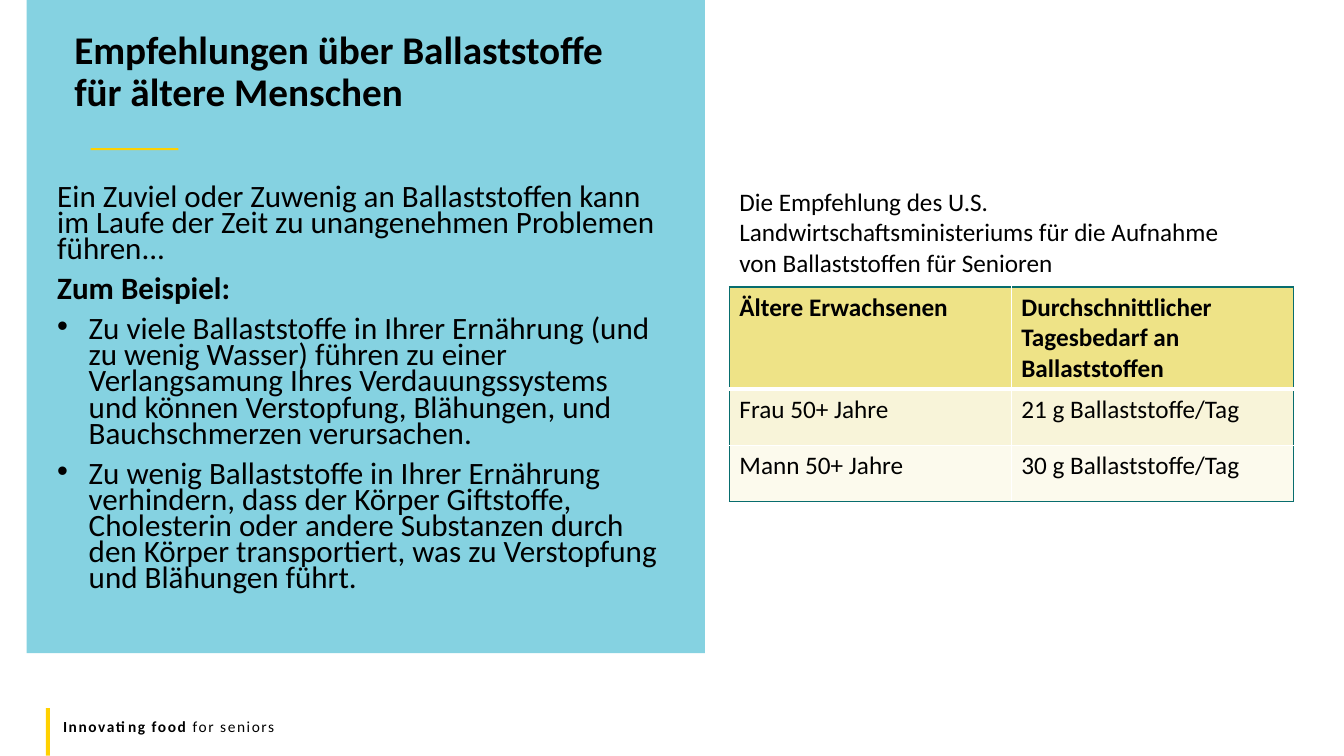
from pptx import Presentation
from pptx.dml.color import RGBColor
from pptx.enum.shapes import MSO_SHAPE as Preset
from pptx.enum.text import MSO_ANCHOR as Anchor
from pptx.oxml import parse_xml
from pptx.oxml.ns import nsdecls
from pptx.util import Pt

BLACK = RGBColor(0x00, 0x00, 0x00)
WHITE = RGBColor(0xFF, 0xFF, 0xFF)
AQUA = RGBColor(0x85, 0xD2, 0xE1)
YELLOW = RGBColor(0xFF, 0xD1, 0x00)
TEAL = RGBColor(0x08, 0x6D, 0x6E)
HEADER = RGBColor(0xEE, 0xE3, 0x87)
BAND = RGBColor(0xF8, 0xF4, 0xD9)
PALE_BAND = RGBColor(0xFC, 0xFA, 0xED)


class SlideBuilder:
    font = "Calibri"

    def __init__(self, slide):
        self.slide = slide

    def rectangle(self, left, top, width, height, color):
        shape = self.slide.shapes.add_shape(
            Preset.RECTANGLE, Pt(left), Pt(top), Pt(width), Pt(height))
        shape.shadow.inherit = False
        shape.fill.solid()
        shape.fill.fore_color.rgb = color
        shape.line.fill.background()

    def text_box(self, left, top, width, height):
        box = self.slide.shapes.add_textbox(Pt(left), Pt(top), Pt(width), Pt(height))
        frame = box.text_frame
        frame.word_wrap = True
        frame.vertical_anchor = Anchor.TOP
        return frame

    def paragraph(self, frame, spans, size, line=1.0, before=0, hang=0,
                  bullet=False, tracking=0):
        para = frame.paragraphs[0]
        if para.runs:
            para = frame.add_paragraph()
        properties = para._p.get_or_add_pPr()
        if hang:
            properties.set("marL", str(Pt(hang)))
            properties.set("indent", str(-Pt(hang)))
        if bullet:
            properties.append(parse_xml(
                f'<a:buFont {nsdecls("a")} typeface="Arial"/>'))
            properties.append(parse_xml(f'<a:buChar {nsdecls("a")} char="•"/>'))
        para.line_spacing = line
        para.space_before = Pt(before)
        for text, bold in spans:
            span = para.add_run()
            span.text = text
            span.font.name = self.font
            span.font.size = Pt(size)
            span.font.bold = bold
            span.font.color.rgb = BLACK
            if tracking:
                span.font._element.set("spc", str(round(tracking * 100)))

    def border(self, cell, edges):
        properties = cell._tc.get_or_add_tcPr()
        for index, (side, color, width) in enumerate(edges):
            properties.insert(index, parse_xml(
                f'<a:ln{side} {nsdecls("a")} w="{Pt(width)}"><a:solidFill>'
                f'<a:srgbClr val="{color}"/></a:solidFill></a:ln{side}>'))

    def table(self, left, top, width, row_heights, rows, fills, size):
        last_row, last_column = len(rows) - 1, len(rows[0]) - 1
        table = self.slide.shapes.add_table(
            len(rows), len(rows[0]), Pt(left), Pt(top), Pt(width),
            Pt(sum(row_heights))).table
        table.horz_banding = False
        for r, values in enumerate(rows):
            table.rows[r].height = Pt(row_heights[r])
            for c, value in enumerate(values):
                cell = table.cell(r, c)
                cell.fill.solid()
                cell.fill.fore_color.rgb = fills[r]
                self.paragraph(cell.text_frame, [(value, r == 0)], size)
                self.border(cell, [
                    ("L", TEAL if c == 0 else WHITE, 1),
                    ("R", TEAL if c == last_column else WHITE, 1),
                    ("T", TEAL if r == 0 else WHITE, 3 if r == 1 else 1),
                    ("B", TEAL if r == last_row else WHITE, 3 if r == 0 else 1),
                ])


def main():
    deck = Presentation()
    deck.slide_width = Pt(960)
    deck.slide_height = Pt(540)
    page = SlideBuilder(deck.slides.add_slide(deck.slide_layouts[6]))

    page.rectangle(19, 0, 484.5, 466.5, AQUA)
    page.rectangle(64.8, 105.8, 62.6, 1.5, YELLOW)
    page.rectangle(32.8, 505.8, 2.9, 34, YELLOW)

    footer = page.text_box(38, 509, 864, 21)
    page.paragraph(footer, [("Innovating food ", True), ("for seniors", False)],
                   11, tracking=1.1)

    body = page.text_box(33.8, 129.6, 445.7, 304.6)
    page.paragraph(body, [(
        "Ein Zuviel oder Zuwenig an Ballaststoffen kann im Laufe der Zeit zu "
        "unangenehmen Problemen führen...", False)], 22.2, line=0.7)
    page.paragraph(body, [("Zum Beispiel:", True)], 22.2, line=0.7,
                   before=10, hang=18)
    for effect in (
        "Zu viele Ballaststoffe in Ihrer Ernährung (und zu wenig Wasser) führen "
        "zu einer Verlangsamung Ihres Verdauungssystems und können Verstopfung, "
        "Blähungen, und Bauchschmerzen verursachen.",
        "Zu wenig Ballaststoffe in Ihrer Ernährung verhindern, dass der Körper "
        "Giftstoffe, Cholesterin oder andere Substanzen durch den Körper "
        "transportiert, was zu Verstopfung und Blähungen führt.",
    ):
        page.paragraph(body, [(effect, False)], 22.2, line=0.7, before=10,
                       hang=22.5, bullet=True)

    title = page.text_box(46, 18, 400.3, 88)
    page.paragraph(title, [
        ("Empfehlungen über Ballaststoffe für ältere Menschen", True)],
        28, line=0.9)

    page.table(521, 205, 402.8, [73, 40, 40], [
        ("Ältere Erwachsenen", "Durchschnittlicher Tagesbedarf an Ballaststoffen"),
        ("Frau 50+ Jahre", "21 g Ballaststoffe/Tag"),
        ("Mann 50+ Jahre", "30 g Ballaststoffe/Tag"),
    ], [HEADER, BAND, PALE_BAND], 18)

    caption = page.text_box(521, 129.6, 368.6, 72.7)
    page.paragraph(caption, [(
        "Die Empfehlung des U.S. Landwirtschaftsministeriums für die Aufnahme "
        "von Ballaststoffen für Senioren", False)], 18)

    deck.save("out.pptx")


if __name__ == "__main__":
    main()
